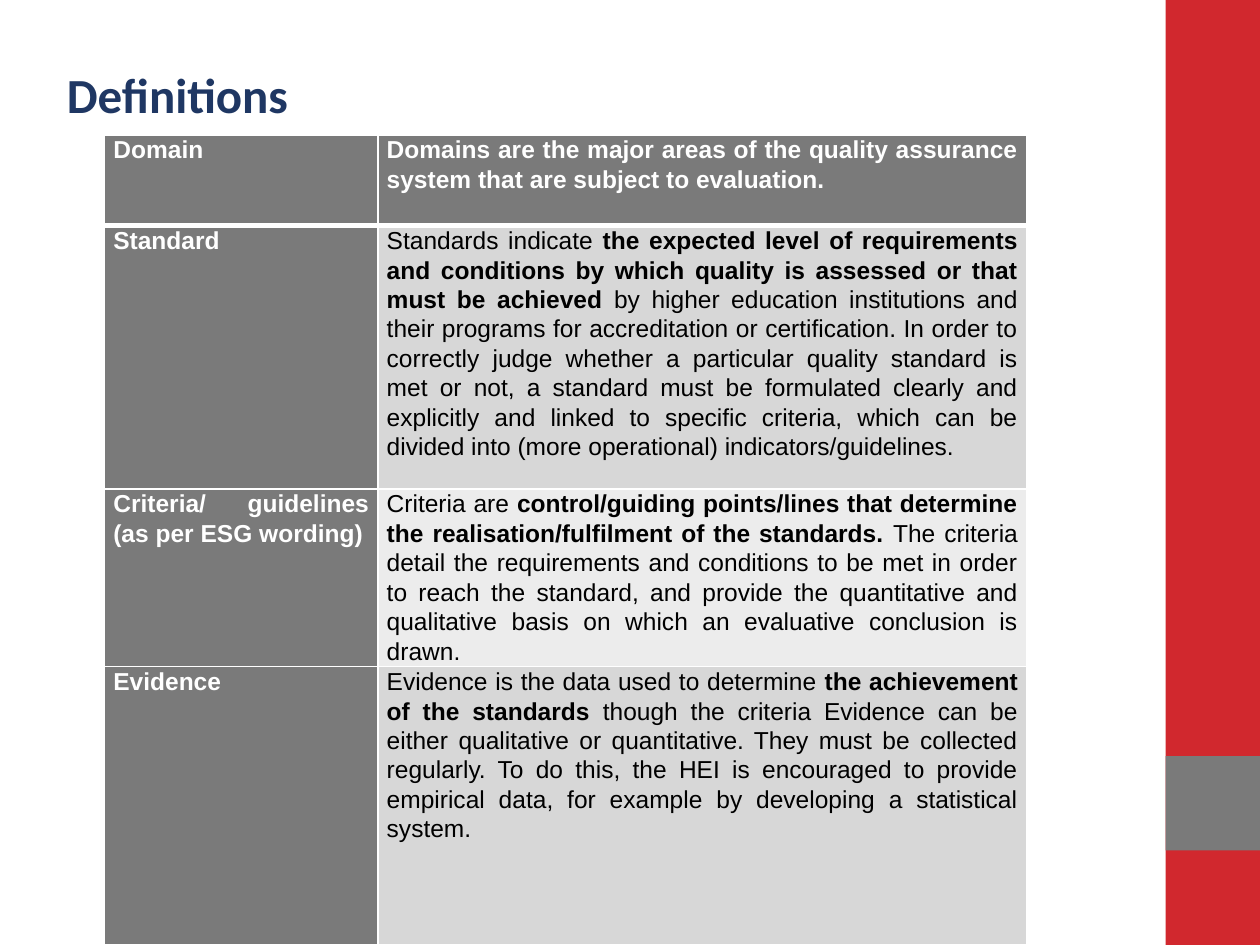
"""Build the Definitions slide: a title, a side band and a table of terms."""
import lxml.etree
import pptx
import pptx.dml.color
import pptx.enum.shapes
import pptx.enum.text
import pptx.oxml.ns
import pptx.util

Inches = pptx.util.Inches
Pt = pptx.util.Pt
RGBColor = pptx.dml.color.RGBColor
qn = pptx.oxml.ns.qn
ALIGN = pptx.enum.text.PP_ALIGN

RED = RGBColor(0xD1, 0x28, 0x2E)
GRAY = RGBColor(0x7A, 0x7A, 0x7A)
NAVY = RGBColor(0x1F, 0x37, 0x63)
WHITE = RGBColor(0xFF, 0xFF, 0xFF)
BLACK = RGBColor(0, 0, 0)
MID_GRAY = RGBColor(0xD7, 0xD7, 0xD7)
LIGHT_GRAY = RGBColor(0xEC, 0xEC, 0xEC)

DEFINITIONS = [
    ("Domain", 0.72, GRAY, WHITE, [
        ("Domains are the major areas of the quality assurance system that are "
         "subject to evaluation.", True)]),
    ("Standard", 2.09, MID_GRAY, BLACK, [
        ("Standards indicate ", False),
        ("the expected level of requirements and conditions by which quality is "
         "assessed or that must be achieved", True),
        (" by higher education institutions and their programs for accreditation or "
         "certification. In order to correctly judge whether a particular quality "
         "standard is met or not, a standard must be formulated clearly and explicitly "
         "and linked to specific criteria, which can be divided into (more operational) "
         "indicators/guidelines.", False)]),
    ("Criteria/ guidelines (as per ESG wording)", 1.41, LIGHT_GRAY, BLACK, [
        ("Criteria are ", False),
        ("control/guiding points/lines that determine the realisation/fulfilment of "
         "the standards. ", True),
        ("The criteria detail the requirements and conditions to be met in order to "
         "reach the standard, and provide the quantitative and qualitative basis on "
         "which an evaluative conclusion is drawn.", False)]),
    ("Evidence", 2.21, MID_GRAY, BLACK, [
        ("Evidence is the data used to determine ", False),
        ("the achievement of the standards ", True),
        ("though the criteria Evidence can be either qualitative or quantitative. They "
         "must be collected regularly. To do this, the HEI is encouraged to provide "
         "empirical data, for example by developing a statistical system.", False)]),
]


def add_borders(cell, bottom_width, top_width):
    properties = cell._tc.get_or_add_tcPr()
    widths = {"a:lnL": 1, "a:lnR": 1, "a:lnT": top_width, "a:lnB": bottom_width}
    for position, (side, width) in enumerate(widths.items()):
        line = lxml.etree.Element(qn(side), w=str(Pt(width)))
        fill = lxml.etree.SubElement(line, qn("a:solidFill"))
        lxml.etree.SubElement(fill, qn("a:srgbClr"), val=str(WHITE))
        properties.insert(position, line)


def fill_cell(cell, runs, background, color, alignment):
    cell.margin_left = cell.margin_right = Inches(0.07)
    cell.margin_top = cell.margin_bottom = 0
    cell.fill.solid()
    cell.fill.fore_color.rgb = background
    paragraph = cell.text_frame.paragraphs[0]
    paragraph.alignment = alignment
    paragraph.line_spacing = 1.07
    for text, bold in runs:
        run = paragraph.add_run()
        run.text = text
        run.font.name = "Arial"
        run.font.size = Pt(14)
        run.font.bold = bold
        run.font.color.rgb = color


presentation = pptx.Presentation()
presentation.slide_width = Inches(10)
presentation.slide_height = Inches(7.5)
slide = presentation.slides.add_slide(presentation.slide_layouts[6])

for top, height, color in [(0, 7.5, RED), (6, 0.75, GRAY)]:
    band = slide.shapes.add_shape(
        pptx.enum.shapes.MSO_SHAPE.RECTANGLE,
        Inches(9.25), Inches(top), Inches(0.75), Inches(height))
    band.shadow.inherit = False
    band.fill.solid()
    band.fill.fore_color.rgb = color
    band.line.fill.background()

terms = slide.shapes.add_table(
    len(DEFINITIONS), 2, Inches(0.83), Inches(1.07), Inches(7.32), Inches(6.43)).table
terms.columns[0].width = Inches(2.17)
terms.columns[1].width = Inches(5.15)

for index, (term, height, background, color, meaning) in enumerate(DEFINITIONS):
    terms.rows[index].height = Inches(height)
    term_cell, meaning_cell = terms.cell(index, 0), terms.cell(index, 1)
    term_alignment = ALIGN.LEFT if term == "Evidence" else ALIGN.JUSTIFY
    fill_cell(term_cell, [(term, True)], GRAY, WHITE, term_alignment)
    fill_cell(meaning_cell, meaning, background, color, ALIGN.JUSTIFY)
    for cell in (term_cell, meaning_cell):
        add_borders(cell, 3 if index == 0 else 1, 3 if index == 1 else 1)

title = slide.shapes.add_textbox(Inches(0.28), Inches(0.34), Inches(11.65), Inches(1.03))
title_frame = title.text_frame
title_frame.word_wrap = True
title_frame.vertical_anchor = pptx.enum.text.MSO_ANCHOR.TOP
title_frame.margin_left = Inches(0.25)
title_frame.margin_top = Inches(0.17)
title_frame.margin_right = Inches(0.1)
title_frame.margin_bottom = Inches(0.08)
title_frame.text = "Definitions"
title_font = title_frame.paragraphs[0].runs[0].font
title_font.name = "Calibri"
title_font.size = Pt(28)
title_font.bold = True
title_font.color.rgb = NAVY

presentation.save("out.pptx")
